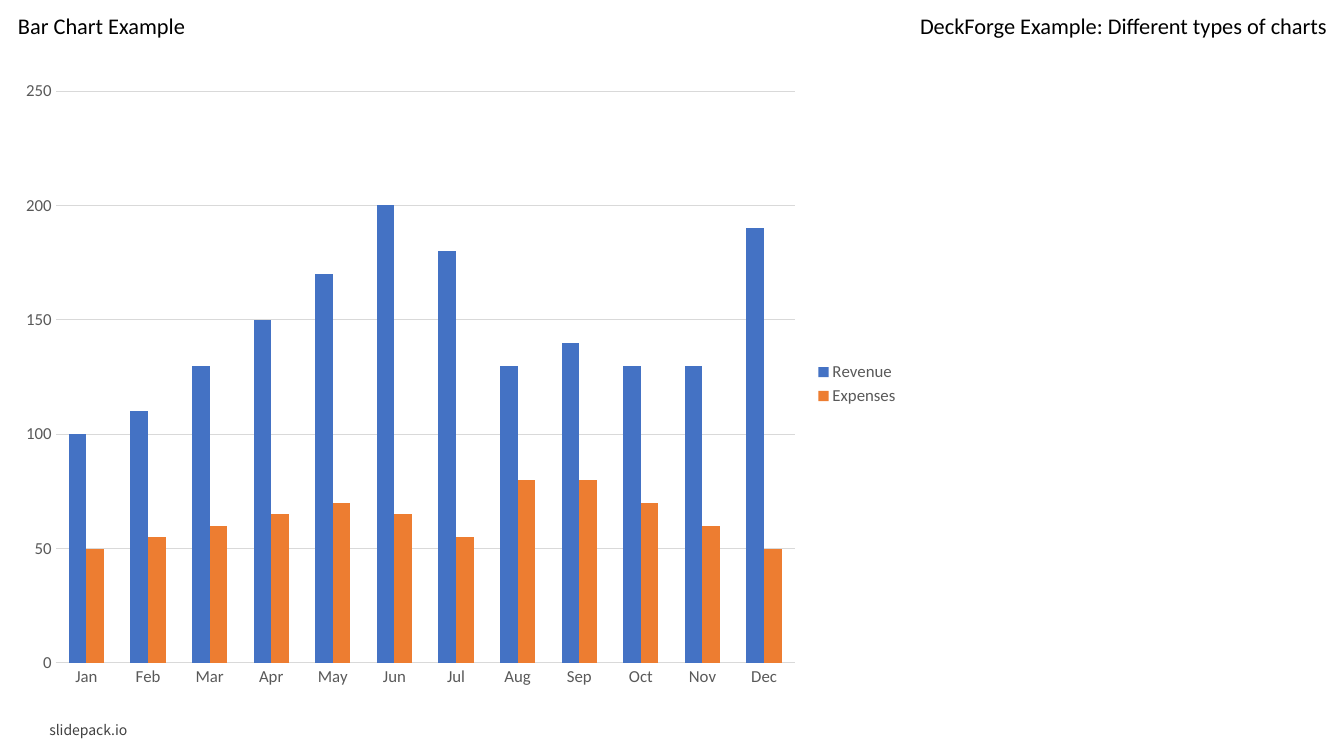
import pptx
import pptx.chart.data
import pptx.dml.color
import pptx.enum.chart
import pptx.enum.text
import pptx.util

Inches, Pt = pptx.util.Inches, pptx.util.Pt
RGB = pptx.dml.color.RGBColor.from_string
ALIGN = pptx.enum.text.PP_ALIGN
ANCHOR = pptx.enum.text.MSO_ANCHOR
XL = pptx.enum.chart

# Content
HEADING = "Bar Chart Example"
DECK_TITLE = "DeckForge Example: Different types of charts"
FOOTER = "slidepack.io"
MONTHS = ["Jan", "Feb", "Mar", "Apr", "May", "Jun",
          "Jul", "Aug", "Sep", "Oct", "Nov", "Dec"]
FIGURES = {
    "Revenue": [100, 110, 130, 150, 170, 200, 180, 130, 140, 130, 130, 190],
    "Expenses": [50, 55, 60, 65, 70, 65, 55, 80, 80, 70, 60, 50],
}

THEME = {
    "font": "Calibri", "footer_font": "Noto Sans CJK JP",
    "heading": 16, "label": 12, "footer": 10,
    "background": "FFFFFF", "ink": "000000", "footer_ink": "404040",
    "label_ink": "595959", "rule": "D9D9D9", "rule_width": 0.75,
    "Revenue": "4472C4", "Expenses": "ED7D31",
}


def set_font(font, size, color, name=THEME["font"]):
    font.name, font.size = name, Pt(size)
    font.color.rgb = RGB(color)


def set_rule(line):
    line.color.rgb = RGB(THEME["rule"])
    line.width = Pt(THEME["rule_width"])


def add_text(slide, text, box, wrap=False, align=ALIGN.LEFT, anchor=ANCHOR.TOP):
    frame = slide.shapes.add_textbox(*map(Inches, box)).text_frame
    frame.word_wrap = wrap
    frame.vertical_anchor = anchor
    if not wrap:
        frame.auto_size = pptx.enum.text.MSO_AUTO_SIZE.SHAPE_TO_FIT_TEXT
    paragraph = frame.paragraphs[0]
    paragraph.text, paragraph.alignment = text, align
    return paragraph


def add_monthly_chart(slide, box):
    figures = pptx.chart.data.CategoryChartData()
    figures.categories = MONTHS
    for name, values in FIGURES.items():
        figures.add_series(name, values)
    chart = slide.shapes.add_chart(
        XL.XL_CHART_TYPE.COLUMN_CLUSTERED, *map(Inches, box), figures).chart
    chart.has_title = False
    set_font(chart.font, THEME["label"], THEME["label_ink"])

    # Columns
    plot = chart.plots[0]
    plot.gap_width, plot.overlap, plot.vary_by_categories = 150, 0, False
    for series in plot.series:
        series.format.fill.solid()
        series.format.fill.fore_color.rgb = RGB(THEME[series.name])

    # Axes
    months, amounts = chart.category_axis, chart.value_axis
    for axis in (months, amounts):
        axis.major_tick_mark = axis.minor_tick_mark = XL.XL_TICK_MARK.NONE
        set_font(axis.tick_labels.font, THEME["label"], THEME["label_ink"])
    set_rule(months.format.line)
    amounts.format.line.fill.background()
    amounts.minimum_scale, amounts.maximum_scale, amounts.major_unit = 0, 250, 50
    set_rule(amounts.major_gridlines.format.line)

    # Legend
    chart.has_legend = True
    chart.legend.position = XL.XL_LEGEND_POSITION.RIGHT
    chart.legend.include_in_layout = False
    set_font(chart.legend.font, THEME["label"], THEME["label_ink"])


def main():
    deck = pptx.Presentation()
    deck.slide_width, deck.slide_height = Inches(13.33), Inches(7.5)
    slide = deck.slides.add_slide(deck.slide_layouts[6])
    slide.background.fill.solid()
    slide.background.fill.fore_color.rgb = RGB(THEME["background"])

    # Footer
    footer = add_text(slide, FOOTER, (0.39, 7.12, 2.91, 0.25),
                      wrap=True, anchor=ANCHOR.MIDDLE)
    set_font(footer.font, THEME["footer"], THEME["footer_ink"], THEME["footer_font"])

    # Headings and chart
    deck_title = add_text(slide, DECK_TITLE, (9.02, 0.07, 4.24, 0.37), align=ALIGN.RIGHT)
    add_monthly_chart(slide, (0.08, 0.68, 8.94, 6.26))
    heading = add_text(slide, HEADING, (0.08, 0.07, 1.88, 0.37))
    for title in (deck_title, heading):
        set_font(title.font, THEME["heading"], THEME["ink"])

    deck.save("out.pptx")


if __name__ == "__main__":
    main()
